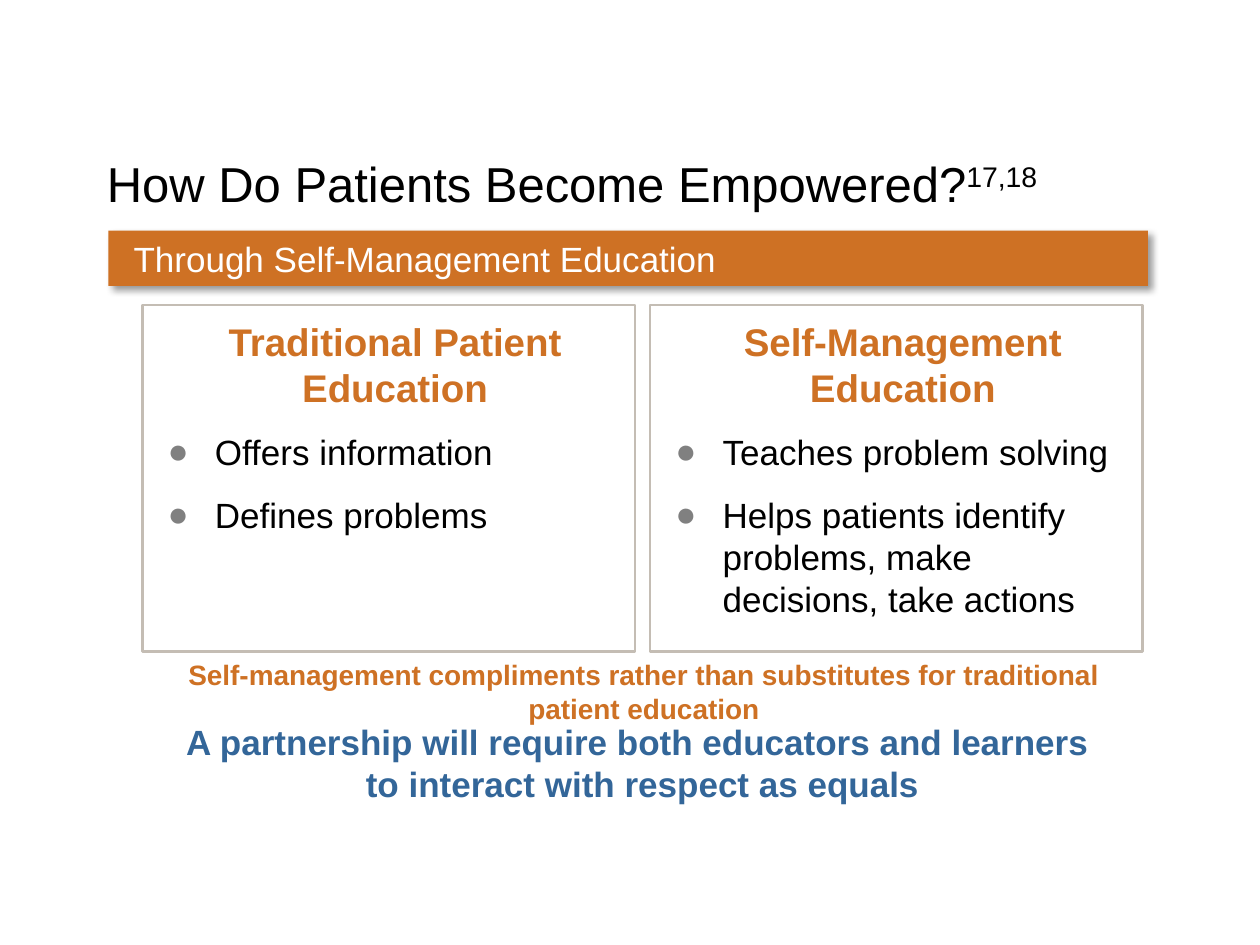
from dataclasses import dataclass

from lxml import etree
from pptx import Presentation
from pptx.dml.color import RGBColor
from pptx.enum.shapes import MSO_SHAPE as Shape
from pptx.enum.text import MSO_ANCHOR as Anchor, PP_ALIGN as Align
from pptx.oxml.ns import qn
from pptx.util import Pt


@dataclass(frozen=True)
class Theme:
    font: str = "Arial"
    orange: str = "CE7124"
    blue: str = "336699"
    frame: str = "C4BDB4"
    bullet: str = "808080"
    black: str = "000000"
    white: str = "FFFFFF"
    title: int = 28
    heading: int = 22
    body: int = 20
    note: int = 16


THEME = Theme()


def color(value):
    return RGBColor.from_string(value)


def add_child(parent, tag, **attributes):
    values = {name: str(value) for name, value in attributes.items()}
    return etree.SubElement(parent, qn(tag), values)


def style(para, size, value, bold=False, align=Align.LEFT):
    para.alignment = align
    for span in para.runs:
        span.font.name = THEME.font
        span.font.size = Pt(size)
        span.font.bold = bold
        span.font.color.rgb = color(value)


def set_frame(shape, left=7.2, top=3.6, anchor=Anchor.TOP):
    """Wrap the text and set its insets; top also serves as the bottom inset."""
    frame = shape.text_frame
    frame.word_wrap = True
    frame.vertical_anchor = anchor
    frame.margin_left, frame.margin_right = Pt(left), Pt(7.2)
    frame.margin_top = frame.margin_bottom = Pt(top)
    return frame


def add_box(page, box):
    shape = page.shapes.add_shape(Shape.RECTANGLE, *map(Pt, box))
    shape.shadow.inherit = False
    return shape


def add_title(page, box, text, citation):
    frame = set_frame(page.shapes.add_textbox(*map(Pt, box)))
    para = frame.paragraphs[0]
    para.text = text
    span = para.add_run()
    span.text = citation
    style(para, THEME.title, THEME.black)
    span.font._element.set("baseline", "30000")


def add_banner(page, box, text):
    shape = add_box(page, box)
    shape.fill.solid()
    shape.fill.fore_color.rgb = color(THEME.orange)
    shape.line.fill.background()
    effects = shape._element.spPr.find(qn("a:effectLst"))
    shadow = add_child(effects, "a:outerShdw", blurRad=Pt(4), dist=Pt(3),
                       dir=45 * 60000, algn="tl", rotWithShape=0)
    tint = add_child(shadow, "a:srgbClr", val=THEME.black)
    add_child(tint, "a:alpha", val=40000)
    frame = set_frame(shape, left=14.4, anchor=Anchor.MIDDLE)
    frame.text = text
    style(frame.paragraphs[0], THEME.body, THEME.white)


def add_bullet(para):
    props = para._p.get_or_add_pPr()
    props.set("marL", str(Pt(27)))
    props.set("indent", str(Pt(-27)))
    para.space_before = Pt(12)
    tint = add_child(props, "a:buClr")
    add_child(tint, "a:srgbClr", val=THEME.bullet)
    add_child(props, "a:buFont", typeface=THEME.font)
    add_child(props, "a:buChar", char="●")


def add_panel(page, box, heading, points):
    shape = add_box(page, box)
    shape.fill.background()
    shape.line.color.rgb = color(THEME.frame)
    shape.line.width = Pt(1.5)
    frame = set_frame(shape, left=14.4, top=7.2)
    frame.text = heading
    style(frame.paragraphs[0], THEME.heading, THEME.orange, True, Align.CENTER)
    for point in points:
        para = frame.add_paragraph()
        para.text = point
        add_bullet(para)
        style(para, THEME.body, THEME.black)


def add_panels(page, box, panels, gap):
    """Share the box equally among panels standing side by side."""
    left, top, width, height = box
    panel_width = (width - gap * (len(panels) - 1)) / len(panels)
    for index, (heading, points) in enumerate(panels):
        panel_left = left + index * (panel_width + gap)
        add_panel(page, (panel_left, top, panel_width, height), heading, points)


def add_message(page, box, text, size, value):
    frame = set_frame(page.shapes.add_textbox(*map(Pt, box)))
    para = frame.paragraphs[0]
    para.text = text
    style(para, size, value, True, Align.CENTER)


def main():
    deck = Presentation()
    deck.slide_width, deck.slide_height = Pt(720), Pt(540)
    page = deck.slides.add_slide(deck.slide_layouts[6])

    add_title(page, (54, 84.24, 630, 66.24),
              "How Do Patients Become Empowered?", "17,18")
    panels = [
        ("Traditional Patient Education",
         ["Offers information", "Defines problems"]),
        ("Self-Management Education",
         ["Teaches problem solving",
          "Helps patients identify problems, make decisions, take actions"]),
    ]
    add_panels(page, (81.36, 174.24, 571.68, 198), panels, gap=8.64)
    add_message(page, (81.36, 408.24, 571.68, 55.44),
                "A partnership will require both educators and learners \v"
                "to interact with respect as equals",
                THEME.body, THEME.blue)
    add_banner(page, (61.92, 131.76, 594, 31.68),
               "Through Self-Management Education")
    add_message(page, (82.08, 372.24, 571.68, 46.08),
                "Self-management compliments rather than substitutes for "
                "traditional patient education",
                THEME.note, THEME.orange)

    deck.save("out.pptx")


if __name__ == "__main__":
    main()
